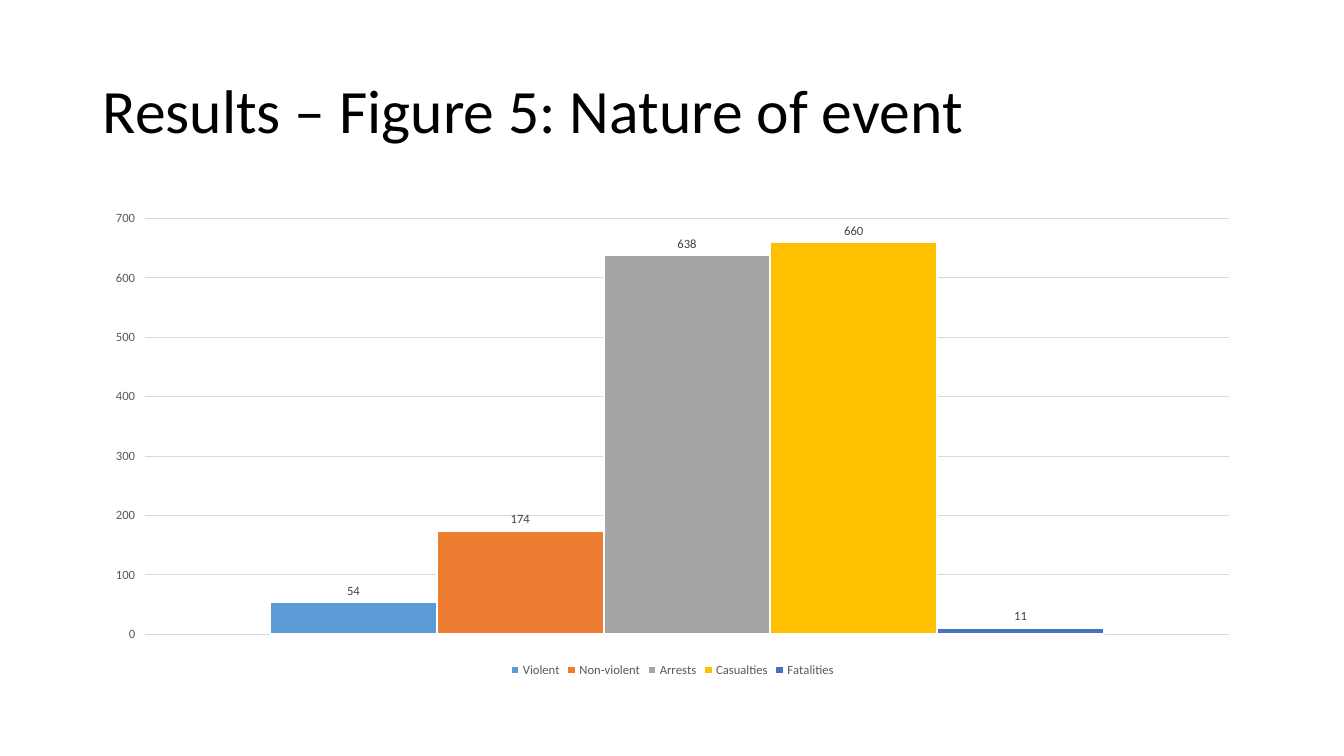
from dataclasses import dataclass

from pptx import Presentation
from pptx.chart.data import CategoryChartData
from pptx.dml.color import RGBColor
from pptx.enum.chart import XL_CHART_TYPE, XL_LABEL_POSITION, XL_LEGEND_POSITION, XL_TICK_MARK
from pptx.enum.text import MSO_ANCHOR
from pptx.slide import Slide
from pptx.text.text import Font
from pptx.util import Inches, Pt

FONT = "Calibri"
LEFT, WIDTH = Inches(0.92), Inches(11.5)


@dataclass
class Outcome:
    name: str
    count: int
    color: str


OUTCOMES = [
    Outcome("Violent", 54, "5B9BD5"),
    Outcome("Non-violent", 174, "ED7D31"),
    Outcome("Arrests", 638, "A5A5A5"),
    Outcome("Casualties", 660, "FFC000"),
    Outcome("Fatalities", 11, "4472C4"),
]


def rgb(color: str) -> RGBColor:
    return RGBColor.from_string(color)


def style_font(font: Font, size: float, color: str) -> None:
    font.name = FONT
    font.size = Pt(size)
    font.color.rgb = rgb(color)


def add_title(slide: Slide, text: str) -> None:
    text_frame = slide.shapes.add_textbox(LEFT, Inches(0.4), WIDTH, Inches(1.45)).text_frame
    text_frame.word_wrap = True
    text_frame.vertical_anchor = MSO_ANCHOR.MIDDLE
    text_frame.text = text
    paragraph = text_frame.paragraphs[0]
    paragraph.line_spacing = 0.9
    style_font(paragraph.runs[0].font, 44, "000000")


def add_outcome_chart(slide: Slide, outcomes: list[Outcome]) -> None:
    chart_data = CategoryChartData()
    chart_data.categories = ["1"]
    for outcome in outcomes:
        chart_data.add_series(outcome.name, [outcome.count])
    chart = slide.shapes.add_chart(
        XL_CHART_TYPE.COLUMN_CLUSTERED, LEFT, Inches(2), WIDTH, Inches(4.76), chart_data
    ).chart
    chart.has_title = False
    style_font(chart.font, 10, "000000")

    # Axes
    chart.category_axis.visible = False
    value_axis = chart.value_axis
    value_axis.minimum_scale = 0
    value_axis.maximum_scale = 700
    value_axis.major_unit = 100
    value_axis.major_tick_mark = XL_TICK_MARK.OUTSIDE
    value_axis.format.line.fill.background()
    style_font(value_axis.tick_labels.font, 9, "595959")
    gridline = value_axis.major_gridlines.format.line
    gridline.color.rgb = rgb("D9D9D9")
    gridline.width = Pt(0.75)

    # Legend
    chart.has_legend = True
    chart.legend.position = XL_LEGEND_POSITION.BOTTOM
    chart.legend.include_in_layout = False
    style_font(chart.legend.font, 9, "595959")

    # Columns and their values
    plot = chart.plots[0]
    plot.gap_width = 150
    plot.overlap = 0
    plot.vary_by_categories = False
    for series, outcome in zip(plot.series, outcomes):
        series.format.fill.solid()
        series.format.fill.fore_color.rgb = rgb(outcome.color)
        series.format.line.color.rgb = rgb("FFFFFF")
        series.format.line.width = Pt(1.5)
        labels = series.data_labels
        labels.show_value = True
        labels.position = XL_LABEL_POSITION.OUTSIDE_END
        style_font(labels.font, 9, "404040")


def main() -> None:
    presentation = Presentation()
    presentation.slide_width = Inches(13.33)
    presentation.slide_height = Inches(7.5)
    slide = presentation.slides.add_slide(presentation.slide_layouts[6])
    add_title(slide, "Results – Figure 5: Nature of event")
    add_outcome_chart(slide, OUTCOMES)
    presentation.save("out.pptx")


if __name__ == "__main__":
    main()
